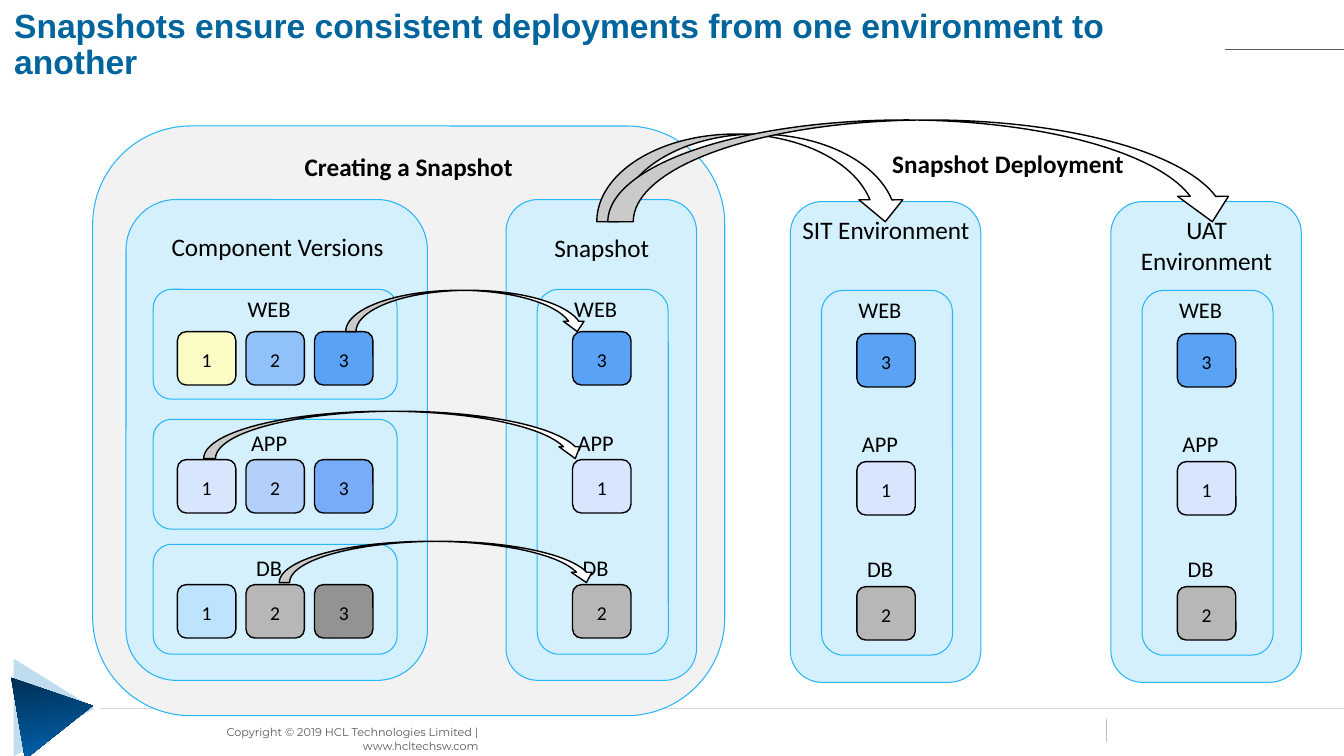
from lxml import etree
from pptx import Presentation, util as u
from pptx.dml import color as dml
from pptx.enum import shapes as es, text as et
from pptx.oxml import ns

HUES = {
    "title": "00649D", "ink": "000000", "note": "595959", "edge": "26B5F7",
    "outer": "F2F2F2", "panel": "D4F0FD", "arrow": "FDFDFD",
    "rule": "D9D9D9", "tick": "BFBFBF",
    "pale": "0477C3", "dark": "002747", "deep": "0066B3",
    "web1": "FBFBC5", "web2": "91C1F9", "web3": "5AA2F6",
    "app1": "D7E6FD", "app2": "B3D0FB", "app3": "78ACF8",
    "db1": "BDE3FF", "db2": "B7B7B7", "db3": "939393",
}
LEFT, MID, RIGHT = et.PP_ALIGN.LEFT, et.PP_ALIGN.CENTER, et.PP_ALIGN.RIGHT
KIND = es.MSO_SHAPE
TILE = (5.8, 5.3)
# part name, label row, tile row, version held in the snapshot
PARTS = [("WEB", 28.8, 32.9, 3), ("APP", 42.1, 45.6, 1), ("DB", 54.5, 58, 2)]


def cell(n):
    """One grid column or row is a tenth of an inch."""
    return u.Inches(n / 10)


def tint(name):
    return dml.RGBColor.from_string(HUES[name])


def apply(item, vals):
    for key, val in vals.items():
        setattr(item, key, val)


class Board:
    def __init__(self, slide):
        self.slide = slide
        self.font = {"name": "Calibri", "size": u.Pt(18), "bold": False}

    def put(self, shape, words, hue="ink", align=MID, pad=(1, 0.5, 1, 0.5),
            top=True, para=None, **font):
        frame = shape.text_frame
        sides = ("margin_left", "margin_top", "margin_right", "margin_bottom")
        apply(frame, dict(zip(sides, map(cell, pad))))
        anchor = et.MSO_ANCHOR.TOP if top else et.MSO_ANCHOR.MIDDLE
        apply(frame, {"word_wrap": True, "vertical_anchor": anchor})
        line = frame.paragraphs[0]
        line.text = words
        apply(line, {"alignment": align, **(para or {})})
        apply(line.font, {**self.font, **font})
        line.font.color.rgb = tint(hue)

    def label(self, col, row, wide, high, words, **style):
        box = self.slide.shapes.add_textbox(*map(cell, (col, row, wide, high)))
        self.put(box, words, **style)

    def shape(self, kind, col, row, wide, high, fill=None, edge=None, width=0.75,
              turn=0, bends=()):
        item = self.slide.shapes.add_shape(kind, *map(cell, (col, row, wide, high)))
        item.shadow.inherit = False
        item.rotation = turn
        for i, bend in enumerate(bends):
            item.adjustments[i] = bend
        if fill:
            item.fill.solid()
            item.fill.fore_color.rgb = tint(fill)
        else:
            item.fill.background()
        if edge:
            item.line.color.rgb = tint(edge)
            item.line.width = u.Pt(width)
        else:
            item.line.fill.background()
        return item

    def round(self, *place, fill=None):
        return self.shape(KIND.ROUNDED_RECTANGLE, *place, fill=fill, edge="edge")

    def tile(self, col, row, part, num):
        item = self.shape(KIND.ROUNDED_RECTANGLE, col, row, *TILE,
                          fill=f"{part.lower()}{num}", edge="ink", width=1)
        self.put(item, str(num), pad=(0, 0.2, 0, 0), top=False, size=u.Pt(14))

    def name(self, col, row, part):
        """Part label set over the tile that starts at col."""
        self.label(col - 1.7, row, 8, 3.7, part, size=u.Pt(16))

    def stack(self, col, row, title, head):
        """Panel with one tile for each part."""
        self.round(col, row, 18.9, 47.7, fill="panel")
        self.label(col, head, 19, 4, title)
        drop = row - 19.8
        self.round(col + 3.1, 28.7 + drop / 2, 13, 36.2)
        for part, tag, spot, num in PARTS:
            self.name(col + 6.6, tag + drop / 2, part)
            self.tile(col + 6.6, spot + drop, part, num)

    def arrow(self, *place, bends=()):
        self.shape(KIND.CURVED_DOWN_ARROW, *place, fill="arrow", edge="ink",
                   width=1, bends=bends)

    def rule(self, col, row, end, base, hue):
        line = self.slide.shapes.add_connector(
            es.MSO_CONNECTOR.STRAIGHT, *map(cell, (col, row, end, base)))
        line.line.color.rgb = tint(hue)
        line.line.width = u.Pt(0.5)
        etree.SubElement(line._element.spPr, ns.qn("a:effectLst"))


def main():
    deck = Presentation()
    apply(deck, {"slide_width": cell(133.33), "slide_height": cell(75)})
    board = Board(deck.slides.add_slide(deck.slide_layouts[6]))

    # Rules, corner triangles and footer
    board.rule(121.5, 4.9, 133.33, 4.9, "note")
    board.rule(9.9, 70.3, 133.33, 70.3, "rule")
    board.rule(109.8, 71.3, 109.8, 73.6, "tick")
    pale = board.shape(KIND.ISOSCELES_TRIANGLE, 0.5, 66.2, 9.7, 8, fill="pale",
                       turn=90.1, bends=[0.51])
    tone = pale._element.spPr.find(".//" + ns.qn("a:srgbClr"))
    etree.SubElement(tone, ns.qn("a:alpha"), val="25000")
    dark = board.shape(KIND.ISOSCELES_TRIANGLE, 1.4, 66.9, 8.2, 7.5, turn=80.3)
    dark.fill.gradient()
    dark.fill.gradient_angle = 0
    for stop, spot, hue in zip(dark.fill.gradient_stops, (0, 0.99), ("dark", "deep")):
        stop.position = spot
        stop.color.rgb = tint(hue)
    board.label(15.4, 71.5, 32.1, 2.4,
                "Copyright © 2019 HCL Technologies Limited | www.hcltechsw.com",
                hue="note", align=RIGHT, pad=(1, 0.5, 0, 0.5),
                name="Montserrat", size=u.Pt(8))

    # Title
    board.label(1.4, 0.4, 120.1, 8.3,
                "Snapshots ensure consistent deployments from one environment to another",
                hue="title", align=LEFT, pad=(0, 0.5, 0, 0.5),
                para={"line_spacing": 0.9}, name="Arial", size=u.Pt(24), bold=True)

    # Component versions
    board.round(9.2, 12.5, 62.7, 58.5, fill="outer")
    board.label(9.2, 14.5, 62.7, 4, "Creating a Snapshot", bold=True)
    board.round(12.5, 19.8, 29.9, 47.7, fill="panel")
    board.label(12.5, 22.5, 30.1, 4, "Component Versions")
    for (part, tag, spot, _), row in zip(PARTS, (28.7, 41.6, 54)):
        board.round(15.2, row, 24.2, 10.9)
        board.name(24.4, tag, part)
        for num in (1, 2, 3):
            board.tile(17.6 + 6.8 * (num - 1), spot, part, num)

    # Snapshot and the picks that fill it
    board.stack(50.2, 19.8, "Snapshot", 22.6)
    board.arrow(34.3, 28.8, 24, 4.1)
    board.arrow(20.2, 40.8, 37.9, 4.7, bends=(0.25, 0.44, 0.25))
    board.arrow(27.7, 53.7, 31.5, 4.1)

    # Environments and deployment
    board.stack(78.4, 20, "SIT Environment", 20.8)
    board.stack(110.2, 20, "UAT Environment", 20.8)
    board.arrow(59.2, 13.3, 30.8, 8.7)
    board.arrow(60.3, 11.9, 62.5, 10.1)
    board.label(78.4, 14.2, 43.2, 4, "Snapshot Deployment", bold=True)

    deck.save("out.pptx")


if __name__ == "__main__":
    main()
